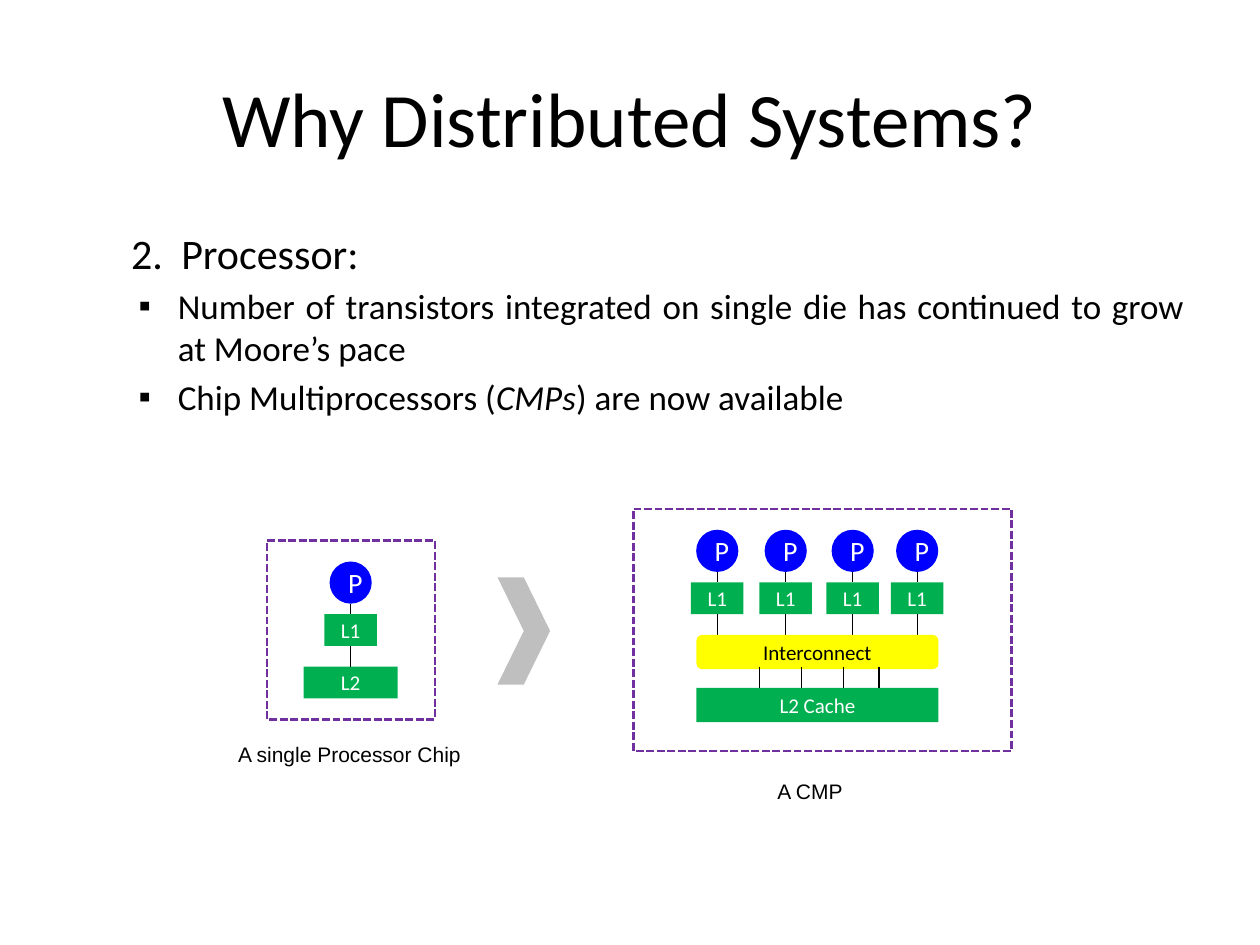
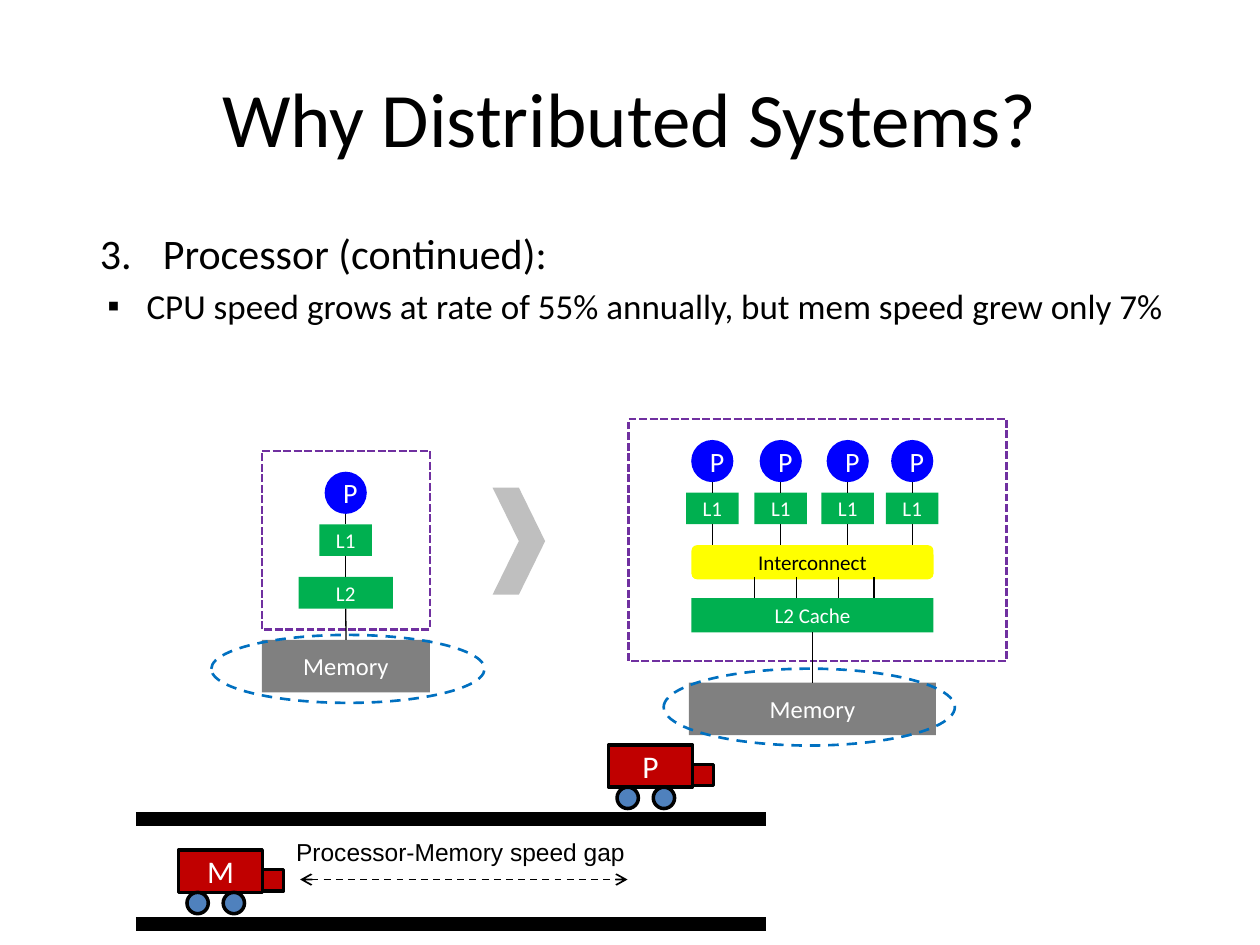
import lxml.etree
import pptx
import pptx.dml.color
import pptx.enum.dml
import pptx.enum.shapes
import pptx.enum.text
import pptx.oxml.ns
import pptx.util

Cm = pptx.util.Cm
Pt = pptx.util.Pt
RGB = pptx.dml.color.RGBColor
KIND = pptx.enum.shapes.MSO_SHAPE
DASH = pptx.enum.dml.MSO_LINE
ALIGN = pptx.enum.text.PP_ALIGN
AUTO = pptx.enum.text.MSO_AUTO_SIZE
qn = pptx.oxml.ns.qn

BLACK = RGB(0x00, 0x00, 0x00)
WHITE = RGB(0xFF, 0xFF, 0xFF)
BLUE = RGB(0x00, 0x00, 0xFF)
GREEN = RGB(0x00, 0xB0, 0x50)
YELLOW = RGB(0xFF, 0xFF, 0x00)
PURPLE = RGB(0x70, 0x30, 0xA0)
SILVER = RGB(0xBF, 0xBF, 0xBF)
GRAY = RGB(0x80, 0x80, 0x80)
RED = RGB(0xC0, 0x00, 0x00)
STEEL = RGB(0x4F, 0x81, 0xBD)
AZURE = RGB(0x00, 0x70, 0xC0)

FRAME = (PURPLE, 1.5, DASH.SQUARE_DOT)
HALO = (AZURE, 1.5, DASH.DASH)
EDGE = (BLACK, 2, None)
WIRE = (BLACK, 0.75, None)
ROAD = (BLACK, 7.75, None)
GAP = (BLACK, 1, DASH.DASH)

CORE_W = 0.85
CELL_H = 0.64
BUS_W, BUS_H = 4.88, 0.69
MID = 1.69
CORES = (1.69, 3.07, 4.42, 5.72)
LINKS = (2.54, 3.39, 4.24, 4.95)


def apply(target, values):
    for name, value in values.items():
        setattr(target, name, value)


def style_font(font, size, color=BLACK, face="Calibri"):
    apply(font, {"name": face, "size": Pt(size)})
    font.color.rgb = color


def style_line(line, look):
    color, width, dash = look
    line.color.rgb = color
    line.width = Pt(width)
    if dash:
        line.dash_style = dash


def place(shape, at):
    apply(shape, dict(zip(("left", "top", "width", "height"), map(Cm, at))))


def draw_box(slide, kind, at, fill=None, line=None, text="", size=12, color=WHITE):
    shape = slide.shapes.add_shape(kind, *map(Cm, at))
    shape.shadow.inherit = False
    if fill is None:
        shape.fill.background()
    else:
        shape.fill.solid()
        shape.fill.fore_color.rgb = fill
    if line:
        style_line(shape.line, line)
    else:
        shape.line.fill.background()
    if text:
        para = shape.text_frame.paragraphs[0]
        para.alignment = ALIGN.CENTER
        run = para.add_run()
        run.text = text
        style_font(run.font, size, color)
    return shape


def draw_line(slide, start, end, look=WIRE, first=None, last=None, arrows=False):
    kind = pptx.enum.shapes.MSO_CONNECTOR.STRAIGHT
    wire = slide.shapes.add_connector(kind, *map(Cm, (*start, *end)))
    if first:
        wire.begin_connect(first, 2)
    if last:
        wire.end_connect(last, 0)
    style_line(wire.line, look)
    if arrows:
        for tag in ("a:headEnd", "a:tailEnd"):
            lxml.etree.SubElement(wire.line._ln, qn(tag), type="arrow")
    lxml.etree.SubElement(wire._element.spPr, qn("a:effectLst"))


def add_label(slide, at, text, size):
    box = slide.shapes.add_textbox(*map(Cm, at))
    apply(box.text_frame, {"word_wrap": False, "auto_size": AUTO.SHAPE_TO_FIT_TEXT})
    run = box.text_frame.paragraphs[0].add_run()
    run.text = text
    style_font(run.font, size, face="Arial")


def add_bullet(para, mark):
    props = para._p.get_or_add_pPr()
    if mark is None:
        lxml.etree.SubElement(props, qn("a:buNone"))
    elif isinstance(mark, int):
        lxml.etree.SubElement(props, qn("a:buFont"), typeface="+mj-lt")
        lxml.etree.SubElement(props, qn("a:buAutoNum"),
                              type="arabicPeriod", startAt=str(mark))
    else:
        lxml.etree.SubElement(props, qn("a:buChar"), char=mark)


def add_page(deck, at, items):
    slide = deck.slides.add_slide(deck.slide_layouts[1])
    title = slide.shapes.title
    place(title, (1.27, 0.76, 22.86, 3.18))
    title.text_frame.text = "Why Distributed Systems?"
    style_font(title.text_frame.paragraphs[0].runs[0].font, 44)
    body = slide.placeholders[1]
    place(body, at)
    frame = body.text_frame
    frame.auto_size = AUTO.NONE
    for index, (text, size, mark, margin, indent) in enumerate(items):
        para = frame.add_paragraph() if index else frame.paragraphs[0]
        apply(para, {"level": 1, "alignment": ALIGN.JUSTIFY})
        props = para._p.get_or_add_pPr()
        props.set("marL", str(Cm(margin)))
        props.set("indent", str(Cm(indent)))
        add_bullet(para, mark)
        for order, part in enumerate(text.split("_")):
            run = para.add_run()
            run.text = part
            style_font(run.font, size)
            run.font.italic = order % 2 == 1
    return slide


def point(text):
    return text, 20, "▪", 2.06, -0.79


def draw_core(slide, mid, top):
    draw_box(slide, KIND.OVAL, (mid - CORE_W / 2, top + 0.42, CORE_W, CORE_W),
             BLUE, text="P", size=16)
    cell = draw_box(slide, KIND.RECTANGLE, (mid - 0.53, top + 1.48, 1.06, CELL_H),
                    GREEN, text="L1")
    draw_line(slide, (mid, top + 1.27), (mid, top + 1.48), last=cell)
    return cell


def draw_single(slide, x, y):
    draw_box(slide, KIND.RECTANGLE, (x, y, 3.39, 3.6), line=FRAME)
    mid = x + MID
    cell = draw_core(slide, mid, y)
    cache = draw_box(slide, KIND.RECTANGLE, (mid - 0.95, y + 2.54, 1.9, CELL_H),
                     GREEN, text="L2")
    draw_line(slide, (mid, y + 2.12), (mid, y + 2.54), first=cell, last=cache)
    return cache


def draw_multi(slide, x, y):
    draw_box(slide, KIND.RECTANGLE, (x, y, 7.62, 4.88), line=FRAME)
    for core in CORES:
        cell = draw_core(slide, x + core, y)
        draw_line(slide, (x + core, y + 2.12), (x + core, y + 2.54), first=cell)
    draw_box(slide, KIND.ROUNDED_RECTANGLE, (x + 1.27, y + 2.54, BUS_W, BUS_H),
             YELLOW, text="Interconnect", color=BLACK)
    cache = draw_box(slide, KIND.RECTANGLE, (x + 1.27, y + 3.61, BUS_W, BUS_H),
                     GREEN, text="L2 Cache")
    for link in LINKS:
        draw_line(slide, (x + link, y + 3.18), (x + link, y + 3.61))
    return cache


def draw_chips(slide, x, y):
    draw_box(slide, KIND.CHEVRON, (x + 4.65, y + 0.74, 1.06, 2.16), SILVER)
    return draw_single(slide, x, y), draw_multi(slide, x + 7.39, y - 0.64)


def draw_memory(slide, cache, at, halo):
    bank = draw_box(slide, KIND.RECTANGLE, at, GRAY, text="Memory", size=14)
    draw_line(slide, (0, 0), (0, 0), first=cache, last=bank)
    draw_box(slide, KIND.OVAL, halo, line=HALO)


def draw_lane(slide, x, y, truck, text):
    left, top = x + truck, y - 1.49
    draw_box(slide, KIND.RECTANGLE, (left, top, 1.69, 0.85), RED, EDGE, text, 18)
    for wheel in (0.17, 0.9):
        draw_box(slide, KIND.OVAL, (left + wheel, top + 0.85, 0.43, 0.43), STEEL, EDGE)
    draw_box(slide, KIND.RECTANGLE, (left + 1.69, top + 0.39, 0.43, 0.43), RED, EDGE)
    draw_line(slide, (x, y), (x + 12.7, y), ROAD)


def build_chips(deck):
    slide = add_page(deck, (1.27, 4.45, 22.86, 4.65), [
        ("2.\tProcessor:", 24, None, 2.13, -1.01),
        point("Number of transistors integrated on single die has continued "
              "to grow at Moore’s pace"),
        point("Chip Multiprocessors (_CMPs_) are now available"),
    ])
    draw_chips(slide, 5.38, 10.9)
    add_label(slide, (4.55, 14.83, 5.03, 0.76), "A single Processor Chip", 12)
    add_label(slide, (15.42, 15.57, 1.85, 0.76), "A CMP", 12)


def build_speed(deck):
    slide = add_page(deck, (0.64, 4.45, 23.5, 2.34), [
        ("Processor (continued):", 24, 3, 2.39, -1.27),
        point("CPU speed grows at rate of 55% annually, but mem speed grew only 7%"),
    ])
    x, y = 5.28, 9.09
    single, multi = draw_chips(slide, x, y)
    draw_memory(slide, single, (x, y + 3.81, 3.39, 1.06),
                (x - 1.02, y + 3.71, 5.51, 1.37))
    draw_memory(slide, multi, (x + 8.61, y + 4.67, 4.98, 1.06),
                (x + 8.1, y + 4.39, 5.87, 1.55))
    draw_lane(slide, 2.74, 16.51, 9.53, "P")
    draw_lane(slide, 2.74, 18.63, 0.86, "M")
    draw_line(slide, (6.05, 17.73), (12.65, 17.73), GAP, arrows=True)
    add_label(slide, (5.72, 16.74, 7.16, 0.86), "Processor-Memory speed gap", 14)


def main():
    deck = pptx.Presentation()
    apply(deck, {"slide_width": Cm(25.4), "slide_height": Cm(19.05)})
    build_chips(deck)
    build_speed(deck)
    deck.save("out.pptx")


if __name__ == "__main__":
    main()
